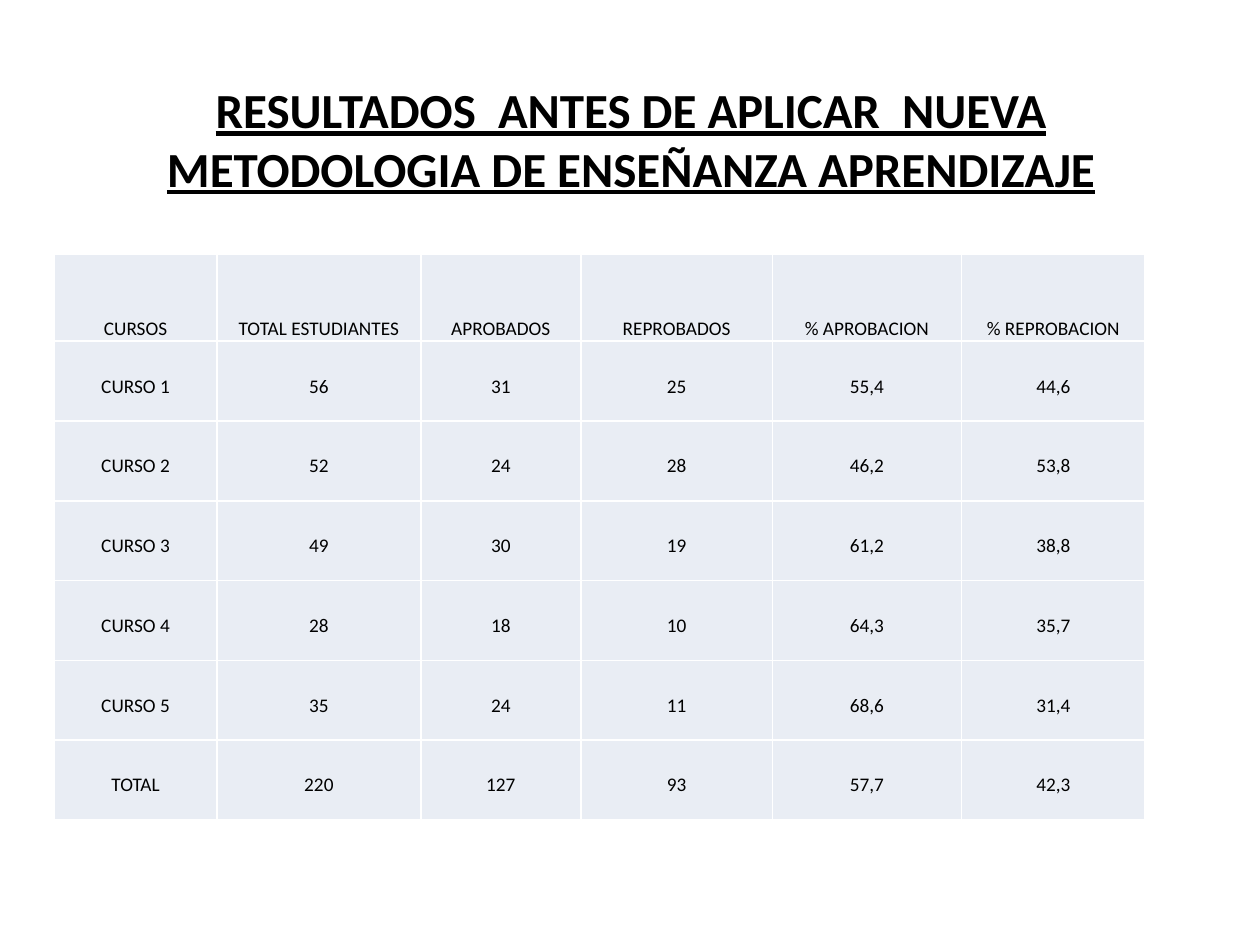
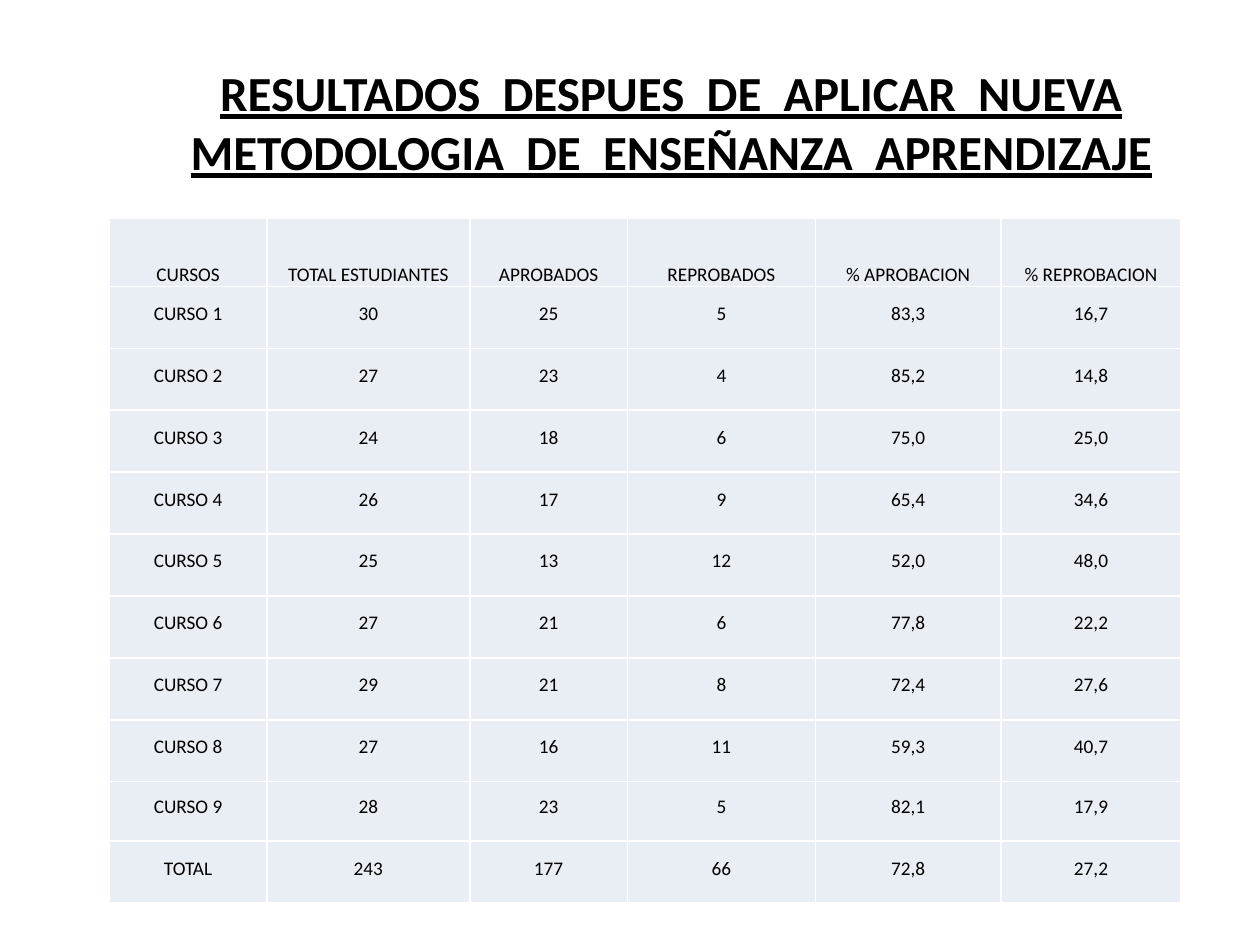
from lxml.etree import SubElement as Sub
from pptx import Presentation
from pptx.dml.color import RGBColor as RGB
from pptx.enum.text import MSO_ANCHOR as Anchor, MSO_AUTO_SIZE as Fit, PP_ALIGN as Align
from pptx.oxml.ns import qn
from pptx.util import Pt

# Shared style
COLORS = {"text": "000000", "cell": "E9EDF4", "rule": "FFFFFF"}
FONT = "Calibri"
HEADS = ["CURSOS", "TOTAL ESTUDIANTES", "APROBADOS", "REPROBADOS",
         "% APROBACION", "% REPROBACION"]

# Enrolled and passed students of each course
BEFORE = [(56, 31), (52, 24), (49, 30), (28, 18), (35, 24)]
AFTER = [(30, 25), (27, 23), (24, 18), (26, 17), (25, 13),
         (27, 21), (29, 21), (27, 16), (28, 23)]


def style(font, size, bold=False, line=False):
    font.name, font.size = FONT, Pt(size)
    font.bold, font.underline = bold, line
    font.color.rgb = RGB.from_string(COLORS["text"])


def add_title(slide, text, left, top, width, height):
    title = slide.shapes.title
    title.left, title.top = Pt(left), Pt(top)
    title.width, title.height = Pt(width), Pt(height)
    frame = title.text_frame
    frame.text = text
    frame.word_wrap = True
    frame.auto_size = Fit.NONE
    frame.vertical_anchor = Anchor.MIDDLE
    par = frame.paragraphs[0]
    par.alignment = Align.CENTER
    style(par.runs[0].font, 28, bold=True, line=True)


def make_row(name, total, passed):
    failed = total - passed
    rates = [f"{100 * n / total:.1f}".replace(".", ",") for n in (passed, failed)]
    return [name, str(total), str(passed), str(failed), *rates]


def make_rows(counts):
    rows = [make_row(f"CURSO {i}", *pair) for i, pair in enumerate(counts, 1)]
    sums = [sum(col) for col in zip(*counts)]
    return [HEADS, *rows, make_row("TOTAL", *sums)]


def add_rules(cell):
    props = cell._tc.get_or_add_tcPr()
    for side in ("lnL", "lnR", "lnT", "lnB"):
        line = Sub(props, qn(f"a:{side}"), w=str(Pt(1)))
        fill = Sub(line, qn("a:solidFill"))
        Sub(fill, qn("a:srgbClr"), val=COLORS["rule"])


def fill_cell(cell, text, foot):
    add_rules(cell)
    cell.fill.solid()
    cell.fill.fore_color.rgb = RGB.from_string(COLORS["cell"])
    cell.margin_left = cell.margin_right = cell.margin_top = Pt(0.75)
    cell.margin_bottom = Pt(foot)
    cell.vertical_anchor = Anchor.BOTTOM
    cell.text = text
    par = cell.text_frame.paragraphs[0]
    par.alignment = Align.CENTER
    style(par.runs[0].font, 11)


def add_grid(slide, counts, left, top, widths, heights):
    rows = make_rows(counts)
    frame = slide.shapes.add_table(len(rows), len(HEADS), Pt(left), Pt(top),
                                   Pt(sum(widths)), Pt(sum(heights)))
    table = frame.table
    for col, width in zip(table.columns, widths):
        col.width = Pt(width)
    for r, (row, height) in enumerate(zip(rows, heights)):
        table.rows[r].height = Pt(height)
        # Headings sit on the rule, values stand one line above it
        foot = 13 if r else 0
        for c, text in enumerate(row):
            fill_cell(table.cell(r, c), text, foot)


def main():
    prs = Presentation()
    prs.slide_width, prs.slide_height = Pt(720), Pt(540)
    plain = prs.slide_layouts.get_by_name("Title Only")

    # Results before the new method
    slide = prs.slides.add_slide(plain)
    add_title(slide, "RESULTADOS  ANTES DE APLICAR  NUEVA METODOLOGIA "
              "DE ENSEÑANZA APRENDIZAJE", 60, 26, 601, 106)
    add_grid(slide, BEFORE, 31, 145.5, [93, 116.5, 91.5, 109.5, 108, 105],
             [49.5] + [45.6] * 6)

    # Results after the new method
    slide = prs.slides.add_slide(plain)
    add_title(slide, "RESULTADOS  DESPUES  DE  APLICAR  NUEVA METODOLOGIA  "
              "DE  ENSEÑANZA  APRENDIZAJE", 86, 32, 595, 75)
    add_grid(slide, AFTER, 62.5, 124.5, [90, 116, 90, 107.5, 106, 103],
             [39.2] + [35.4] * 8 + [34, 35.4])

    prs.save("out.pptx")


if __name__ == "__main__":
    main()
